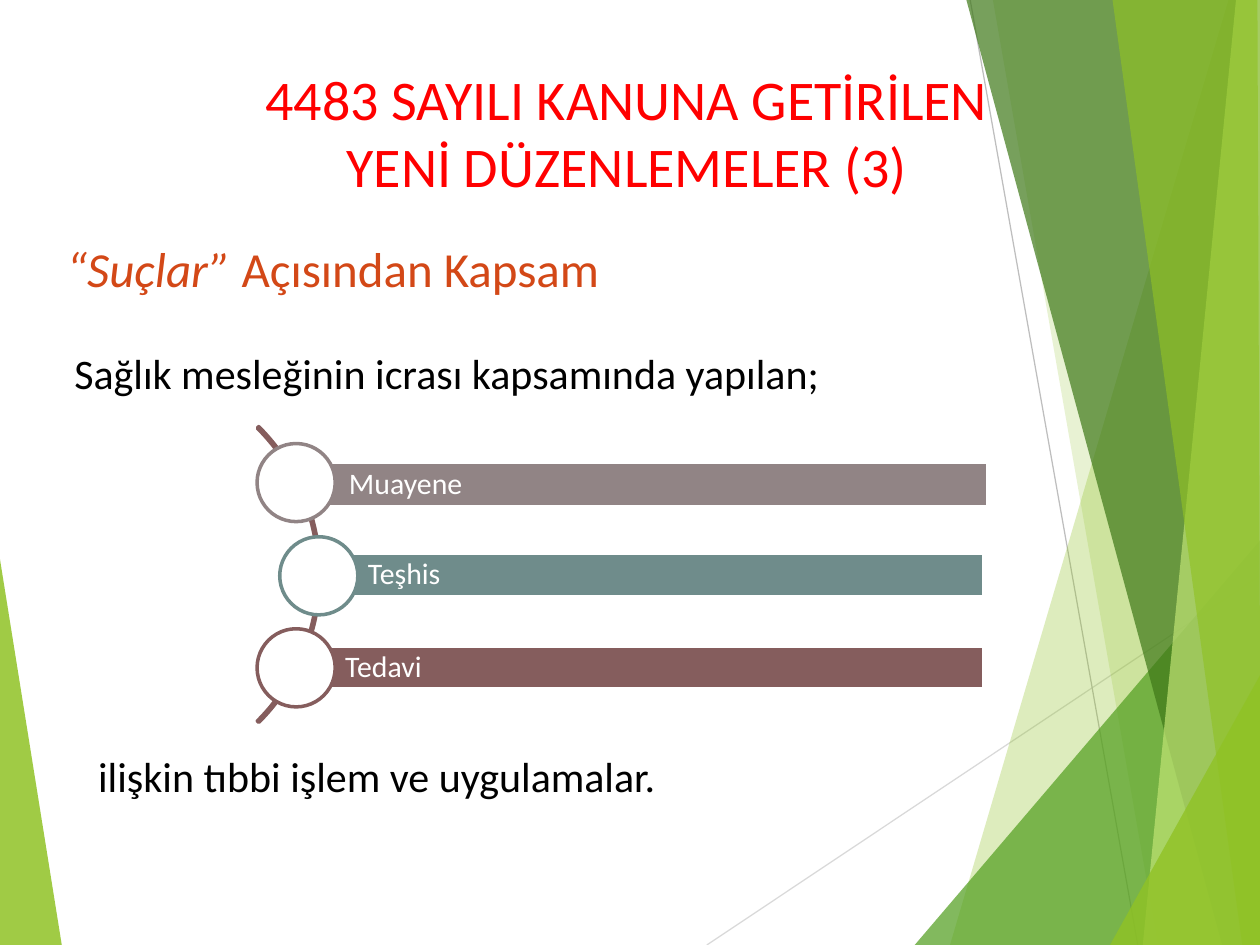
from lxml import etree
from pptx import Presentation
from pptx import util as u
from pptx.dml.color import RGBColor
from pptx.enum import shapes, text
from pptx.oxml import ns

WHITE = RGBColor(0xFF, 0xFF, 0xFF)
BLACK = RGBColor(0x00, 0x00, 0x00)
RED = RGBColor(0xFF, 0x00, 0x00)
ORANGE = RGBColor(0xD3, 0x48, 0x17)
GREEN = RGBColor(0x90, 0xC2, 0x25)
MID_GREEN = RGBColor(0x53, 0x9F, 0x20)
DARK_GREEN = RGBColor(0x3E, 0x78, 0x18)
LIGHT_GREEN = RGBColor(0xC0, 0xE3, 0x74)
PALE_GRAY = RGBColor(0xD9, 0xD9, 0xD9)
GRAY = RGBColor(0xBE, 0xBE, 0xBE)
TAUPE = RGBColor(0x91, 0x84, 0x85)
TEAL = RGBColor(0x6F, 0x8C, 0x8B)
MAROON = RGBColor(0x85, 0x5D, 0x5D)

FACETS = [
    ([(10, 0), (9.75, 0), (7.54, 7.5), (10, 7.5)], GREEN, 30),
    ([(10, 0), (7.88, 0), (9.19, 7.5), (10, 7.5)], GREEN, 20),
    ([(10, 4.29), (7.26, 7.5), (10, 7.5)], MID_GREEN, 72),
    ([(10, 0), (7.67, 0), (9.7, 7.5), (10, 7.5)], DARK_GREEN, 70),
    ([(10, 0), (9.81, 0), (9.07, 7.5), (10, 7.5)], LIGHT_GREEN, 70),
    ([(9.98, 0), (8.83, 0), (9.86, 7.5), (10, 7.5), (10, 5.22)], GREEN, 65),
    ([(10, 5.36), (8.81, 7.5), (10, 7.5)], GREEN, 80),
]
STEPS = [
    ("Muayene", TAUPE, (2.38, 3.67, 5.46, 0.35), (2.04, 3.52)),
    ("Teşhis", TEAL, (2.53, 4.39, 5.28, 0.35), (2.22, 4.26)),
    ("Tedavi", MAROON, (2.35, 5.13, 5.46, 0.34), (2.04, 4.99)),
]


class Deck:
    """Holds the font and the current slide, and draws each kind of element."""

    def __init__(self, font):
        self.font = font
        self.prs = Presentation()
        self.prs.slide_width, self.prs.slide_height = u.Inches(10), u.Inches(7.5)
        self.s = self.prs.slides.add_slide(self.prs.slide_layouts[5])

    def place(self, sp, box):
        sp.left, sp.top, sp.width, sp.height = map(u.Inches, box)

    def frame(self, sp, insets, anchor):
        tf = sp.text_frame
        tf.word_wrap = True
        tf.vertical_anchor = anchor
        tf.margin_left, tf.margin_top, tf.margin_right, tf.margin_bottom = map(u.Inches, insets)
        return tf

    def paragraph(self, p, runs, size, color, align=text.PP_ALIGN.LEFT, indent=0):
        for words, italic in runs:
            r = p.add_run()
            r.text = words
            if italic:
                r.font.italic = True
        p.alignment = align
        p.font.name, p.font.size = self.font, u.Pt(size)
        p.font.color.rgb = color
        if indent:
            pPr = p._p.get_or_add_pPr()
            pPr.set("marL", str(u.Inches(indent)))
            pPr.set("indent", "0")

    def title(self, words, box):
        sp = self.s.shapes.title
        self.s.shapes._spTree.append(sp._element)
        self.place(sp, box)
        tf = self.frame(sp, (0, 0, 0, 0), text.MSO_ANCHOR.BOTTOM)
        self.paragraph(tf.paragraphs[0], [(words, False)], 32, RED, text.PP_ALIGN.CENTER)

    def textbox(self, box, insets):
        sp = self.s.shapes.add_textbox(*map(u.Inches, box))
        return self.frame(sp, insets, text.MSO_ANCHOR.TOP)

    def facet(self, points, color, opacity):
        pts = [(u.Inches(x), u.Inches(y)) for x, y in points]
        fb = self.s.shapes.build_freeform(*pts[0])
        fb.add_line_segments(pts[1:], close=True)
        sp = fb.convert_to_shape()
        sp.shadow.inherit = False
        sp.fill.solid()
        sp.fill.fore_color.rgb = color
        sp.line.fill.background()
        clr = sp._element.spPr.find(".//" + ns.qn("a:srgbClr"))
        etree.SubElement(clr, ns.qn("a:alpha")).set("val", str(opacity * 1000))

    def line(self, ends, color):
        cx = self.s.shapes.add_connector(shapes.MSO_CONNECTOR.STRAIGHT, *map(u.Inches, ends))
        cx.line.color.rgb, cx.line.width = color, u.Pt(0.72)
        etree.SubElement(cx._element.spPr, ns.qn("a:effectLst"))

    def shape(self, kind, box, line, fill=None):
        sp = self.s.shapes.add_shape(kind, *map(u.Inches, box))
        sp.shadow.inherit = False
        sp.line.color.rgb, sp.line.width = line, u.Pt(2)
        if fill is None:
            sp.fill.background()
        else:
            sp.fill.solid()
            sp.fill.fore_color.rgb = fill
        return sp

    def arc(self, box, color, adjustments):
        sp = self.shape(shapes.MSO_SHAPE.BLOCK_ARC, box, color)
        for i, value in enumerate(adjustments):
            sp.adjustments[i] = value

    def step(self, words, color, bar, dot):
        sp = self.shape(shapes.MSO_SHAPE.RECTANGLE, bar, WHITE, color)
        tf = self.frame(sp, (0.39, 0.05, 0.05, 0.05), text.MSO_ANCHOR.MIDDLE)
        self.paragraph(tf.paragraphs[0], [(words, False)], 17, WHITE)
        tf.paragraphs[0].line_spacing = 0.9
        self.shape(shapes.MSO_SHAPE.OVAL, (*dot, 0.62, 0.62), color, WHITE)


def main():
    d = Deck("Calibri")
    d.facet([(0, 4.44), (0, 7.5), (0.49, 7.5)], GREEN, 85)
    d.line((5.61, 7.5, 10, 4.57), PALE_GRAY)
    d.line((7.7, 0, 9.03, 7.5), GRAY)
    for facet in FACETS:
        d.facet(*facet)

    d.title("4483 SAYILI KANUNA GETİRİLEN YENİ DÜZENLEMELER (3)", (1.77, 0.44, 6.41, 1.14))
    tf = d.textbox((0.5, 1.89, 9, 2.83), (0, 0, 0, 0))
    d.paragraph(tf.paragraphs[0], [("“Suçlar” ", True), ("Açısından Kapsam", False)],
                28, ORANGE, indent=0.03)
    p = tf.add_paragraph()
    d.paragraph(p, [("Sağlık mesleğinin icrası kapsamında yapılan;", False)],
                24, BLACK, text.PP_ALIGN.JUSTIFY, 0.09)
    p.space_before = u.Pt(29)

    d.arc((-0.78, 2.9, 3.32, 3.32), MAROON, (189, 27, 0.005))
    for step in STEPS:
        d.step(*step)

    tf = d.textbox((0.59, 5.91, 8.91, 0.5), (0.1, 0.05, 0.1, 0.05))
    d.paragraph(tf.paragraphs[0], [("ilişkin tıbbi işlem ve uygulamalar.", False)],
                24, BLACK, text.PP_ALIGN.JUSTIFY, 0.09)
    d.prs.save("out.pptx")


if __name__ == "__main__":
    main()
